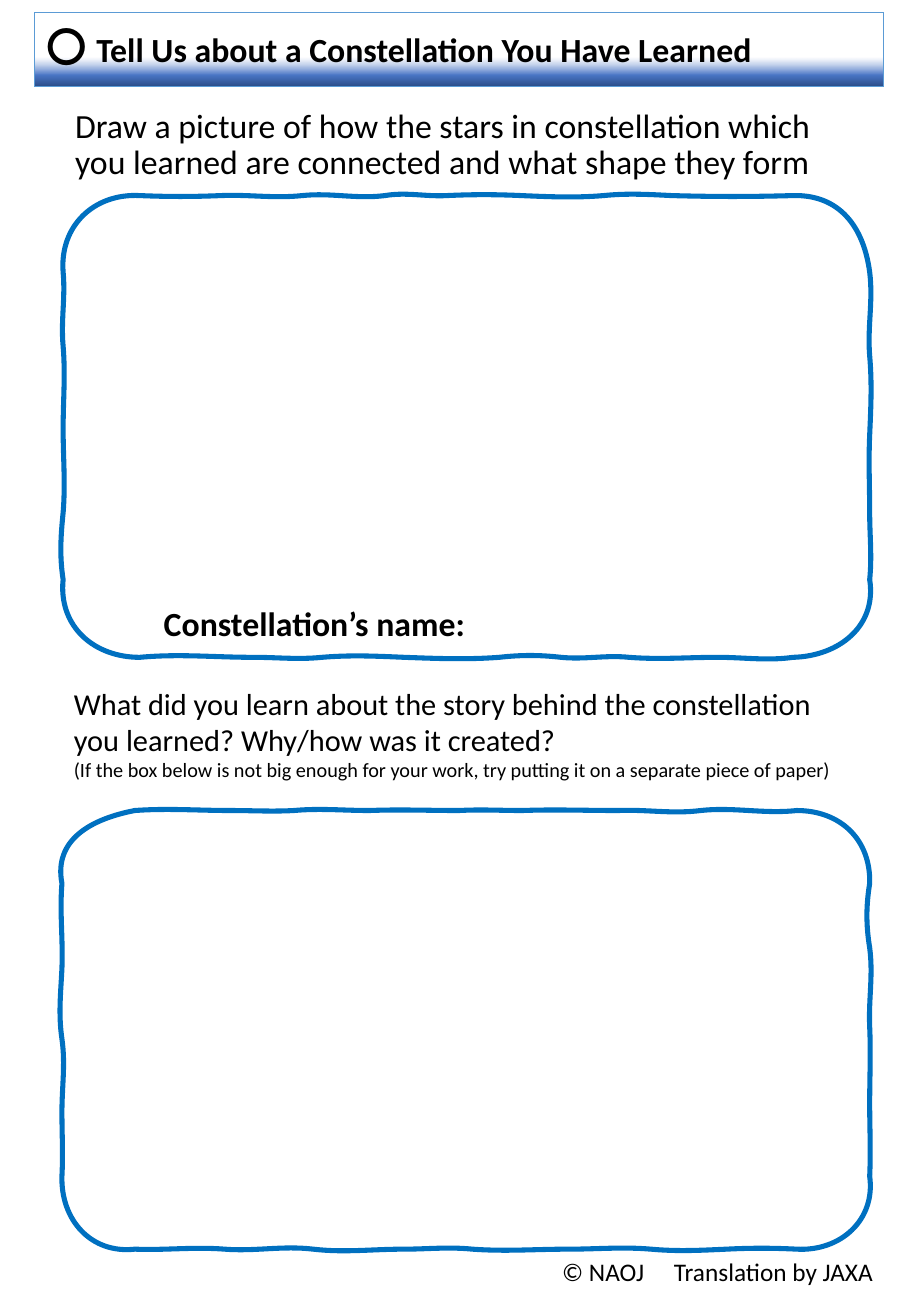
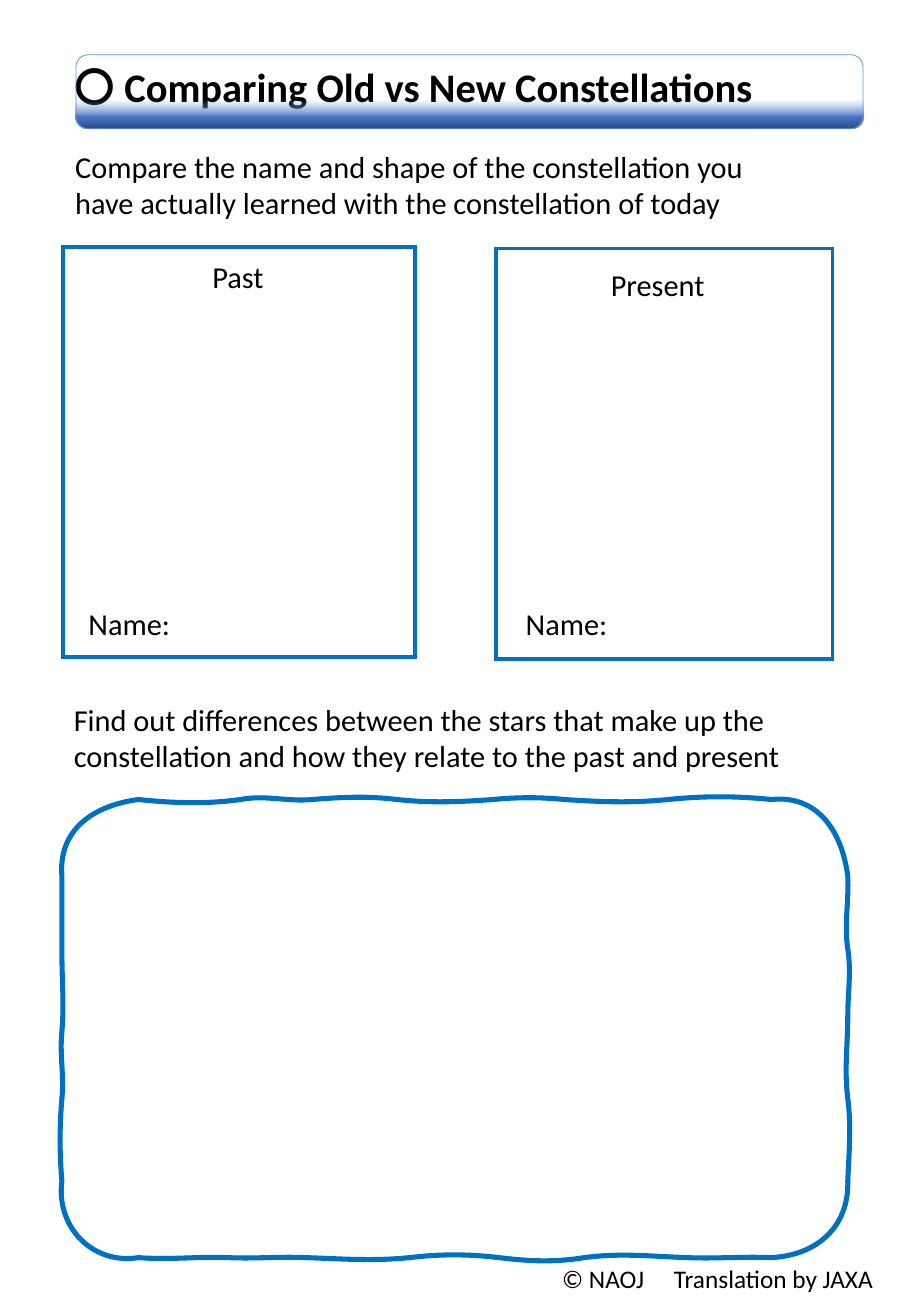
from dataclasses import dataclass
from typing import Any, NamedTuple

from lxml.etree import SubElement, fromstring
from pptx import Presentation
from pptx.dml.color import RGBColor
from pptx.enum.shapes import MSO_SHAPE
from pptx.enum.text import MSO_ANCHOR, PP_ALIGN
from pptx.util import Emu, Inches, Pt

# The page is a grid of cells, a tenth of an inch each way.
COLS, ROWS = 75, 108.3
CELL = Inches(0.1)
EDGE, BEND = 0.35, 0.6  # reach of a curve's handles on a side, at a corner

INK, BLUE, RIM = "000000", "0070C0", "5B9BD5"
FONT = "Calibri"
FADE = ((60, "8FAADC", 0), (84, "4A76C6", 100), (100, "2A4B86", 100))
NS = "http://schemas.openxmlformats.org/drawingml/2006/main"


class Box(NamedTuple):
    left: float
    top: float
    width: float
    height: float


class Run(NamedTuple):
    text: str
    size: float


@dataclass
class Label:
    box: Box
    paras: list[list[Run]]
    bold: bool = False
    wrap: bool = True
    lead: float = 1.0


class Stop(NamedTuple):
    """Place along a side; sideways pull before it and after it, in tenths."""
    at: float
    pull: float
    push: float | None = None


class Knot(NamedTuple):
    x: float
    y: float
    flat: bool
    pull: float
    push: float


@dataclass
class Frame:
    """Wavy outline: a box and the stops of its sides, clockwise from the top."""
    box: Box
    top: list[tuple]
    right: list[tuple]
    bottom: list[tuple]
    left: list[tuple]

    def knots(self) -> list[Knot]:
        x, y, w, h = self.box
        sides = ((self.top, y, True), (self.right, x + w, False),
                 (self.bottom, y + h, True), (self.left, x, False))
        out = []
        for stops, base, flat in sides:
            for stop in (Stop(*s) for s in stops):
                push = -stop.pull if stop.push is None else stop.push
                spot = (stop.at, base) if flat else (base, stop.at)
                out.append(Knot(*spot, flat, stop.pull / 10, push / 10))
        return out


def hue(code: str) -> RGBColor:
    return RGBColor.from_string(code)


def dress(item: Any, **form: Any) -> None:
    """Set each format value on the item."""
    for name, value in form.items():
        setattr(item, name, value)


def place(box: Box) -> list[Emu]:
    return [Emu(round(part * CELL)) for part in box]


def trim(shape: Any, tint: str, width: float) -> None:
    """Give an outline only."""
    shape.shadow.inherit = False
    shape.fill.background()
    shape.line.color.rgb = hue(tint)
    shape.line.width = Pt(width)
    rim = shape.element.spPr.find(f"{{{NS}}}ln")
    SubElement(rim, f"{{{NS}}}miter", lim="800000")


def shade(shape: Any) -> None:
    """Fill with the band's fade, from clear to dark blue downwards."""
    trim(shape, RIM, 0.5)
    stops = "".join(
        f'<a:gs pos="{pos * 1000}"><a:srgbClr val="{code}">'
        f'<a:alpha val="{solid * 1000}"/></a:srgbClr></a:gs>'
        for pos, code, solid in FADE)
    fade = fromstring(f'<a:gradFill xmlns:a="{NS}" rotWithShape="1"><a:gsLst>'
                      f'{stops}</a:gsLst><a:lin ang="5400000" scaled="0"/>'
                      '</a:gradFill>')
    props = shape.element.spPr
    props.replace(props.find(f"{{{NS}}}noFill"), fade)


def write(shape: Any, label: Label) -> None:
    frame = shape.text_frame
    frame.word_wrap = label.wrap
    for row, runs in enumerate(label.paras):
        para = frame.add_paragraph() if row else frame.paragraphs[0]
        dress(para, alignment=PP_ALIGN.LEFT, line_spacing=label.lead)
        for text, size in runs:
            run = para.add_run()
            run.text = text
            dress(run.font, name=FONT, size=Pt(size), bold=label.bold)
            run.font.color.rgb = hue(INK)


def head(slide: Any, label: Label) -> Any:
    title = slide.shapes.title
    names = ("left", "top", "width", "height")
    dress(title, **dict(zip(names, place(label.box))))
    write(title, label)
    title.text_frame.vertical_anchor = MSO_ANCHOR.MIDDLE
    return title


def note(slide: Any, label: Label) -> None:
    write(slide.shapes.add_textbox(*place(label.box)), label)


def tag(slide: Any, text: str, box: Box, size: float = 18,
        bold: bool = False) -> None:
    """Add a label of one line."""
    note(slide, Label(box, [[Run(text, size)]], bold, wrap=False))


def block(slide: Any, kind: MSO_SHAPE, box: Box) -> Any:
    shape = slide.shapes.add_shape(kind, *place(box))
    trim(shape, BLUE, 2.25)
    return shape


def curve(a: Knot, b: Knot, box: Box) -> Any:
    """Bezier element from one knot to the next, measured from the box."""
    reach = EDGE if a.flat == b.flat else BEND
    dx, dy = reach * (b.x - a.x), reach * (b.y - a.y)
    one = (a.x + dx, a.y + a.push) if a.flat else (a.x + a.push, a.y + dy)
    two = (b.x - dx, b.y + b.pull) if b.flat else (b.x + b.pull, b.y - dy)
    dots = "".join(f'<a:pt x="{round((x - box.left) * CELL)}" '
                   f'y="{round((y - box.top) * CELL)}"/>'
                   for x, y in (one, two, b[:2]))
    return fromstring(f'<a:cubicBezTo xmlns:a="{NS}">{dots}</a:cubicBezTo>')


def wave(slide: Any, frame: Frame) -> None:
    """Draw the frame's outline, each straight piece bent to a curve."""
    knots = frame.knots()
    ring = knots[1:] + knots[:1]
    dots = [(round(k.x * CELL), round(k.y * CELL)) for k in ring]
    pen = slide.shapes.build_freeform(*dots[-1], scale=1.0)
    pen.add_line_segments(dots, close=True)
    shape = pen.convert_to_shape()
    lines = list(shape.element.iter(f"{{{NS}}}lnTo"))
    for line, a, b in zip(lines, knots, ring):
        line.getparent().replace(line, curve(a, b, frame.box))
    trim(shape, BLUE, 3)


def foot(slide: Any, top: float) -> None:
    tag(slide, "© NAOJ", Box(45.3, top, 8.8, 3.5), 15)
    tag(slide, "Translation by JAXA", Box(54.5, top, 18.5, 3.5), 15)


PICTURE = Frame(
    Box(5.2, 16.1, 66.4, 38),
    top=[(11.5, -2, 1), (18.2, 1), (24.9, 2.5), (31.7, 3), (36.8, 1),
         (42.9, -1), (49.7, 2), (55.3, -1), (65.3, 1)],
    right=[(22.4, -5, 3), (29.3, -2), (35.8, 1), (42.2, 0), (47.7, 2, 6)],
    bottom=[(65.3, -1, 3), (59.1, 0), (51.8, 2), (46.2, 2), (41.1, -2),
            (33.3, 1), (26.5, -2), (20.9, 0), (11.5, -3, 0)],
    left=[(47.7, -4, -3), (42.2, -2), (35.3, 0), (28.5, 2), (22.4, 2, -3)])

STORY = Frame(
    Box(5.1, 66.7, 66.5, 36.1),
    top=[(11.1, 7, -2), (19, 0), (24.2, 1, -2), (30.4, 0, -1), (37.8, 0, -1),
         (43, 0, -1), (50.9, 0, -1), (57.7, 3), (65.6, 3, 0)],
    right=[(72.7, 1, -3), (78, -3), (84.5, -1), (90.8, 0), (96.8, 1, 5)],
    bottom=[(65.6, 2, -1), (59.8, -1), (53.6, 2), (46.8, 0), (38.9, 2),
            (33.2, 0), (25.8, 3), (18.5, 2), (11.1, 1, 4)],
    left=[(96.8, -1), (91.5, 0), (85.5, 3), (79.7, -1), (72.7, -2, -7)])

FINDS = Frame(
    Box(5.1, 65.8, 64.7, 37.7),
    top=[(11.4, 5, 3), (19.8, 4), (25.7, 2), (32.7, -3), (40.6, 2),
         (46.5, -2), (55, 3), (63.5, -3, -4)],
    right=[(72.1, -5, 1), (78.1, -3), (83.6, 0), (90.4, -3), (97.2, 1, 1)],
    bottom=[(63.5, -2, -1), (56.6, 1), (48.1, -4), (41.1, 3), (33.7, -3),
            (25.2, 1), (18.8, 1), (11.4, 2, 6)],
    left=[(97.2, -5, -2), (90.4, -2), (84.9, -2), (78.4, 0), (72.1, 0, -3)])


def learned(slide: Any) -> None:
    shade(head(slide, Label(
        Box(2.85, 1, 69.9, 6.1),
        [[Run("〇 ", 24),
          Run("Tell Us about a Constellation You Have Learned", 20)]],
        bold=True, lead=0.9)))
    note(slide, Label(
        Box(5.2, 8.5, 64.7, 9.3),
        [[Run("Draw a picture of how the stars in constellation which you "
              "learned are connected and what shape they form", 20)]],
        lead=0.9))
    wave(slide, PICTURE)
    wave(slide, STORY)
    note(slide, Label(
        Box(5.1, 55.85, 66.5, 9.1),
        [[Run("What did you learn about the story behind the constellation "
              "you learned? Why/how was it created?", 18)],
         [Run("(If the box below is not big enough for your work, try "
              "putting it on a separate piece of paper)", 12)]]))
    tag(slide, "Constellation’s name:", Box(12.5, 49.1, 43.7, 4.4), 20, True)
    foot(slide, 102.9)


def compare(slide: Any) -> None:
    head(slide, Label(
        Box(5.15, 3.4, 64.7, 7.9),
        [[Run("〇 Comparing Old vs New Constellations", 24)]],
        bold=True, lead=0.9))
    note(slide, Label(
        Box(5.2, 11.7, 61.5, 8.7),
        [[Run("Compare the name and shape of the constellation you have "
              "actually learned with the constellation of today", 18)]]))
    note(slide, Label(
        Box(5.1, 57.2, 64.7, 15.9),
        [[Run("Find out differences between the stars that make up the "
              "constellation and how they relate to the past and present",
              18)]]))
    shade(block(slide, MSO_SHAPE.ROUNDED_RECTANGLE, Box(6.25, 4.5, 64.8, 6.1)))
    eras = (("Past", Box(5.2, 20.3, 29, 33.8), Box(16.5, 20.75, 6.3, 4), 6.3),
            ("Present", Box(40.85, 20.45, 27.7, 33.8),
             Box(49.3, 21.4, 9.8, 4), 42.3))
    for era, card, spot, left in eras:
        block(slide, MSO_SHAPE.RECTANGLE, card)
        tag(slide, era, spot)
        tag(slide, "Name:", Box(left, 49.3, 8.8, 4))
    wave(slide, FINDS)
    foot(slide, 103.5)


def main() -> None:
    deck = Presentation()
    dress(deck, slide_width=Emu(round(COLS * CELL)),
          slide_height=Emu(round(ROWS * CELL)))
    for draw in (learned, compare):
        draw(deck.slides.add_slide(deck.slide_layouts[5]))
    deck.save("out.pptx")


if __name__ == "__main__":
    main()
